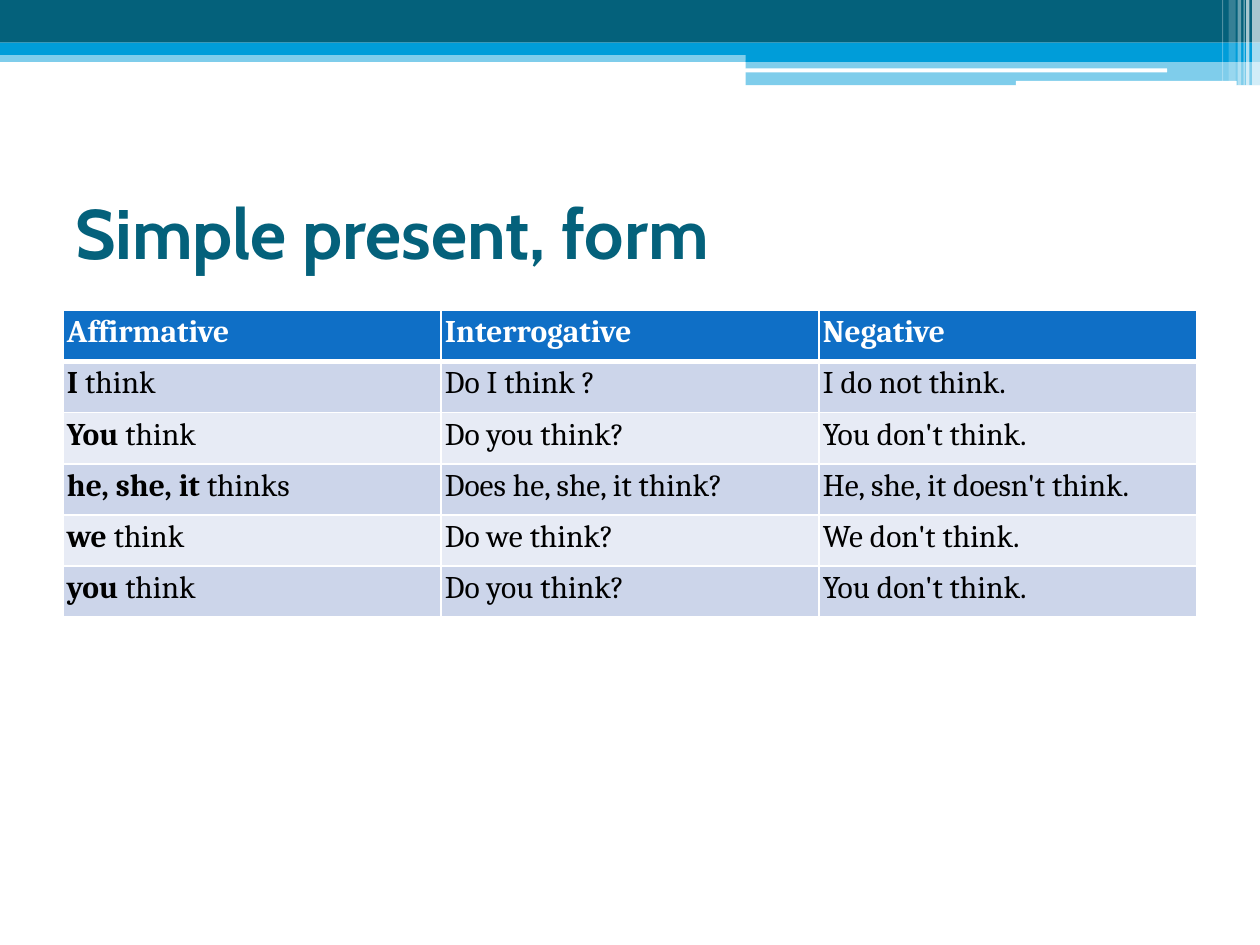
from lxml.etree import SubElement
from pptx import Presentation
from pptx.dml.color import RGBColor
from pptx.enum.shapes import MSO_SHAPE
from pptx.enum.text import MSO_ANCHOR
from pptx.oxml.ns import qn
from pptx.util import Cm, Pt

COLORS = {
    "teal": "04617B", "blue": "009DD9", "white": "FFFFFF", "black": "000000",
    "header": "0F6FC6", "odd_row": "CCD5EA", "even_row": "E7EBF5",
}


def add_text(paragraph, text, font="Cambria", size=18, color="black", bold=False):
    run = paragraph.add_run()
    run.text = text
    run.font.name = font
    run.font.size = Pt(size)
    run.font.bold = bold
    run.font.color.rgb = RGBColor.from_string(COLORS[color])


def add_border(cell, side, width):
    line = SubElement(cell._tc.get_or_add_tcPr(), qn(f"a:ln{side}"), w=str(Pt(width)))
    fill = SubElement(line, qn("a:solidFill"))
    SubElement(fill, qn("a:srgbClr"), val=COLORS["white"])


presentation = Presentation()
presentation.slide_width = Cm(25.4)
presentation.slide_height = Cm(19.05)
slide = presentation.slides.add_slide(presentation.slide_layouts[6])

# Top bands and right-hand stripes: left, top, width, height, colour, opacity %
RECTANGLE, ROUNDED = MSO_SHAPE.RECTANGLE, MSO_SHAPE.ROUNDED_RECTANGLE
decorations = [
    (RECTANGLE, 0, 1.02, 25.4, 0.23, "blue", 50),
    (RECTANGLE, 0, 0, 25.4, 0.86, "teal", 100),
    (RECTANGLE, 0, 0.86, 25.4, 0.25, "blue", 100),
    (RECTANGLE, 15.03, 1, 10.37, 0.25, "blue", 100),
    (RECTANGLE, 15.03, 1.22, 10.37, 0.5, "blue", 50),
    (ROUNDED, 15.02, 1.38, 8.51, 0.08, "white", 100),
    (ROUNDED, 20.48, 1.63, 4.45, 0.1, "white", 100),
    (RECTANGLE, 25.24, 0, 0.16, 1.73, "white", 65),
    (RECTANGLE, 25.12, 0, 0.07, 1.73, "white", 65),
    (RECTANGLE, 25.07, 0, 0.02, 1.73, "white", 60),
    (RECTANGLE, 24.95, 0, 0.07, 1.73, "white", 40),
    (RECTANGLE, 24.77, 0, 0.14, 1.63, "white", 20),
    (RECTANGLE, 24.64, 0, 0.02, 1.63, "white", 30),
]
for kind, left, top, width, height, color, opacity in decorations:
    shape = slide.shapes.add_shape(kind, Cm(left), Cm(top), Cm(width), Cm(height))
    shape.shadow.inherit = False
    shape.line.fill.background()
    shape.fill.solid()
    shape.fill.fore_color.rgb = RGBColor.from_string(COLORS[color])
    if opacity < 100:
        color_element = shape.element.spPr.find(".//" + qn("a:srgbClr"))
        SubElement(color_element, qn("a:alpha"), val=str(opacity * 1000))

# Title
title = slide.shapes.add_textbox(Cm(1.27), Cm(3.18), Cm(22.86), Cm(2.97))
title.text_frame.word_wrap = True
title.text_frame.vertical_anchor = MSO_ANCHOR.MIDDLE
add_text(title.text_frame.paragraphs[0], "Simple present, form",
         font="Cabin", size=40, color="teal", bold=True)

# Table: each cell holds a bold part and a plain part
rows = [
    [("Affirmative", ""), ("Interrogative", ""), ("Negative", "")],
    [("I", " think"), ("", "Do I think ?"), ("", "I do not think.")],
    [("You", " think"), ("", "Do you think?"), ("", "You don't think.")],
    [("he, she, it", " thinks"), ("", "Does he, she, it think?"),
     ("", "He, she, it doesn't think.")],
    [("we", " think"), ("", "Do we think?"), ("", "We don't think.")],
    [("you", " think"), ("", "Do you think?"), ("", "You don't think.")],
]
row_height = Cm(1.03)
table = slide.shapes.add_table(len(rows), 3, Cm(1.27), Cm(6.26), Cm(22.86),
                               row_height * len(rows)).table
for row_index, row in enumerate(rows):
    table.rows[row_index].height = row_height
    if row_index == 0:
        fill_color, text_color = "header", "white"
    else:
        fill_color = "odd_row" if row_index % 2 else "even_row"
        text_color = "black"
    for column_index, (bold_part, plain_part) in enumerate(row):
        cell = table.cell(row_index, column_index)
        cell.margin_left = cell.margin_right = Cm(0.08)
        cell.margin_top = cell.margin_bottom = Cm(0.08)
        # The line between header and body is thicker
        top_width = 3 if row_index == 1 else 1
        bottom_width = 3 if row_index == 0 else 1
        for side, width in zip("LRTB", (1, 1, top_width, bottom_width)):
            add_border(cell, side, width)
        cell.fill.solid()
        cell.fill.fore_color.rgb = RGBColor.from_string(COLORS[fill_color])
        paragraph = cell.text_frame.paragraphs[0]
        for text, bold in ((bold_part, True), (plain_part, False)):
            if text:
                add_text(paragraph, text, color=text_color, bold=bold)

presentation.save("out.pptx")
